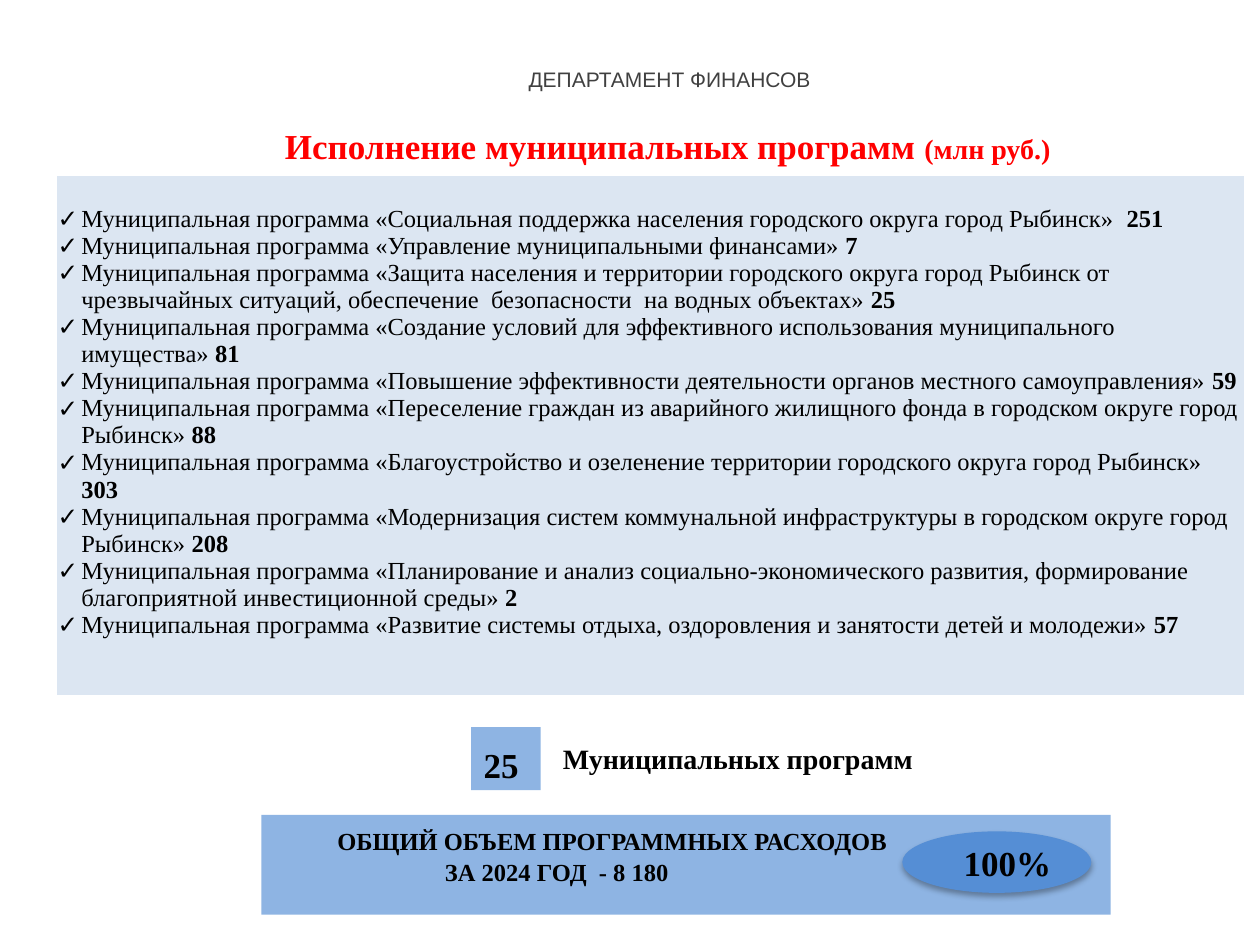
import pptx
import pptx.util
import pptx.dml.color
import pptx.enum.shapes
import pptx.enum.text
from lxml import etree

Cm, Pt = pptx.util.Cm, pptx.util.Pt
RGBColor = pptx.dml.color.RGBColor
MSO_SHAPE = pptx.enum.shapes.MSO_SHAPE
ANCHOR = pptx.enum.text.MSO_ANCHOR
ALIGN = pptx.enum.text.PP_ALIGN

BLACK = RGBColor(0x00, 0x00, 0x00)
RED = RGBColor(0xFF, 0x00, 0x00)
GRAY = RGBColor(0x40, 0x40, 0x40)
PALE_BLUE = RGBColor(0xDC, 0xE6, 0xF2)
LIGHT_BLUE = RGBColor(0x8E, 0xB4, 0xE3)
BLUE = RGBColor(0x55, 0x8E, 0xD5)
DRAWING_NS = "http://schemas.openxmlformats.org/drawingml/2006/main"

PROGRAMS = [
    ("Социальная поддержка населения городского округа город Рыбинск»  ", "251"),
    ("Управление муниципальными финансами» ", "7"),
    ("Защита населения и территории городского округа город Рыбинск от чрезвычайных "
     "ситуаций, обеспечение  безопасности  на водных объектах» ", "25"),
    ("Создание условий для эффективного использования муниципального имущества» ", "81"),
    ("Повышение эффективности деятельности органов местного самоуправления» ", "59"),
    ("Переселение граждан из аварийного жилищного фонда в городском округе город "
     "Рыбинск» ", "88"),
    ("Благоустройство и озеленение территории городского округа город Рыбинск» ", "303"),
    ("Модернизация систем коммунальной инфраструктуры в городском округе город "
     "Рыбинск» ", "208"),
    ("Планирование и анализ социально-экономического развития, формирование "
     "благоприятной инвестиционной среды» ", "2"),
    ("Развитие системы отдыха, оздоровления и занятости детей и молодежи» ", "57"),
]


def write(paragraph, text, size=14, bold=True, color=BLACK, font="Times New Roman",
          align=ALIGN.LEFT):
    paragraph.alignment = align
    run = paragraph.add_run()
    run.text = text
    run.font.size = Pt(size)
    run.font.bold = bold
    run.font.name = font
    run.font.color.rgb = color


def add_filled(slide, kind, left, top, width, height, fill):
    shape = slide.shapes.add_shape(kind, Cm(left), Cm(top), Cm(width), Cm(height))
    shape.shadow.inherit = False
    shape.fill.solid()
    shape.fill.fore_color.rgb = fill
    shape.line.fill.background()
    shape.text_frame.word_wrap = True
    shape.text_frame.vertical_anchor = ANCHOR.TOP
    return shape


deck = pptx.Presentation()
deck.slide_width, deck.slide_height = Cm(25.4), Cm(19.05)
slide = deck.slides.add_slide(deck.slide_layouts[5])

# Heading
title = slide.shapes.title
title.left, title.top, title.width, title.height = Cm(0.86), Cm(2.34), Cm(25.2), Cm(1.19)
title.text_frame.vertical_anchor = ANCHOR.MIDDLE
heading = title.text_frame.paragraphs[0]
write(heading, "Исполнение муниципальных программ ", size=20, color=RED, align=ALIGN.CENTER)
write(heading, "(млн руб.)", size=16, color=RED, align=ALIGN.CENTER)

department = slide.shapes.add_textbox(Cm(8.3), Cm(1), Cm(10.4), Cm(1.2)).text_frame
department.word_wrap = True
department.vertical_anchor = ANCHOR.MIDDLE
write(department.paragraphs[0], "ДЕПАРТАМЕНТ ФИНАНСОВ", size=12, bold=False, color=GRAY,
      font="Arial", align=ALIGN.CENTER)

# Programme list
table = slide.shapes.add_table(1, 1, Cm(1.13), Cm(3.54), Cm(23.97), Cm(10.48)).table
table.first_row = table.horz_banding = False
programs = table.cell(0, 0)
programs.fill.solid()
programs.fill.fore_color.rgb = PALE_BLUE
programs.margin_left = programs.margin_right = Cm(0.03)
programs.margin_top, programs.margin_bottom = Cm(0.6), Cm(0)
programs.vertical_anchor = ANCHOR.TOP
for index, (name, amount) in enumerate(PROGRAMS):
    frame = programs.text_frame
    item = frame.add_paragraph() if index else frame.paragraphs[0]
    properties = item._p.get_or_add_pPr()
    properties.set("marL", str(Cm(0.48)))
    properties.set("indent", str(-Cm(0.48)))
    etree.SubElement(properties, f"{{{DRAWING_NS}}}buFont", typeface="Arial")
    etree.SubElement(properties, f"{{{DRAWING_NS}}}buChar", char="✓")
    write(item, "Муниципальная программа «" + name, bold=False)
    write(item, amount)

# Number of programmes
count = add_filled(slide, MSO_SHAPE.RECTANGLE, 9.5, 14.66, 1.4, 1.27, LIGHT_BLUE)
count.text_frame.margin_top = Cm(0.33)
count.text_frame.margin_right = Cm(0)
write(count.text_frame.paragraphs[0], "25", size=20)

count_label = slide.shapes.add_textbox(Cm(11.1), Cm(14.83), Cm(7.65), Cm(0.94)).text_frame
write(count_label.paragraphs[0], "Муниципальных программ", size=16)

# Total spending
total = add_filled(slide, MSO_SHAPE.RECTANGLE, 5.27, 16.43, 17.12, 2.01, LIGHT_BLUE).text_frame
total.margin_top = Cm(0.22)
for index, (text, indent) in enumerate([("ОБЩИЙ ОБЪЕМ ПРОГРАММНЫХ РАСХОДОВ", 1.28),
                                        ("ЗА 2024 ГОД  - 8 180", 3.45)]):
    line = total.add_paragraph() if index else total.paragraphs[0]
    line._p.get_or_add_pPr().set("marL", str(Cm(indent)))
    line.space_before = Pt(index)
    write(line, text)

share = add_filled(slide, MSO_SHAPE.OVAL, 18.19, 16.76, 3.81, 1.24, BLUE)
share.text_frame.vertical_anchor = ANCHOR.MIDDLE
write(share.text_frame.paragraphs[0], "100%", size=20, align=ALIGN.RIGHT)
effects = share._element.spPr.find(f"{{{DRAWING_NS}}}effectLst")
shadow = etree.SubElement(effects, f"{{{DRAWING_NS}}}outerShdw", blurRad=str(Pt(3.5)),
                          dist=str(Pt(2.2)), dir="5400000", rotWithShape="0")
shadow_color = etree.SubElement(shadow, f"{{{DRAWING_NS}}}srgbClr", val=str(BLACK))
etree.SubElement(shadow_color, f"{{{DRAWING_NS}}}alpha", val="32000")

deck.save("out.pptx")
